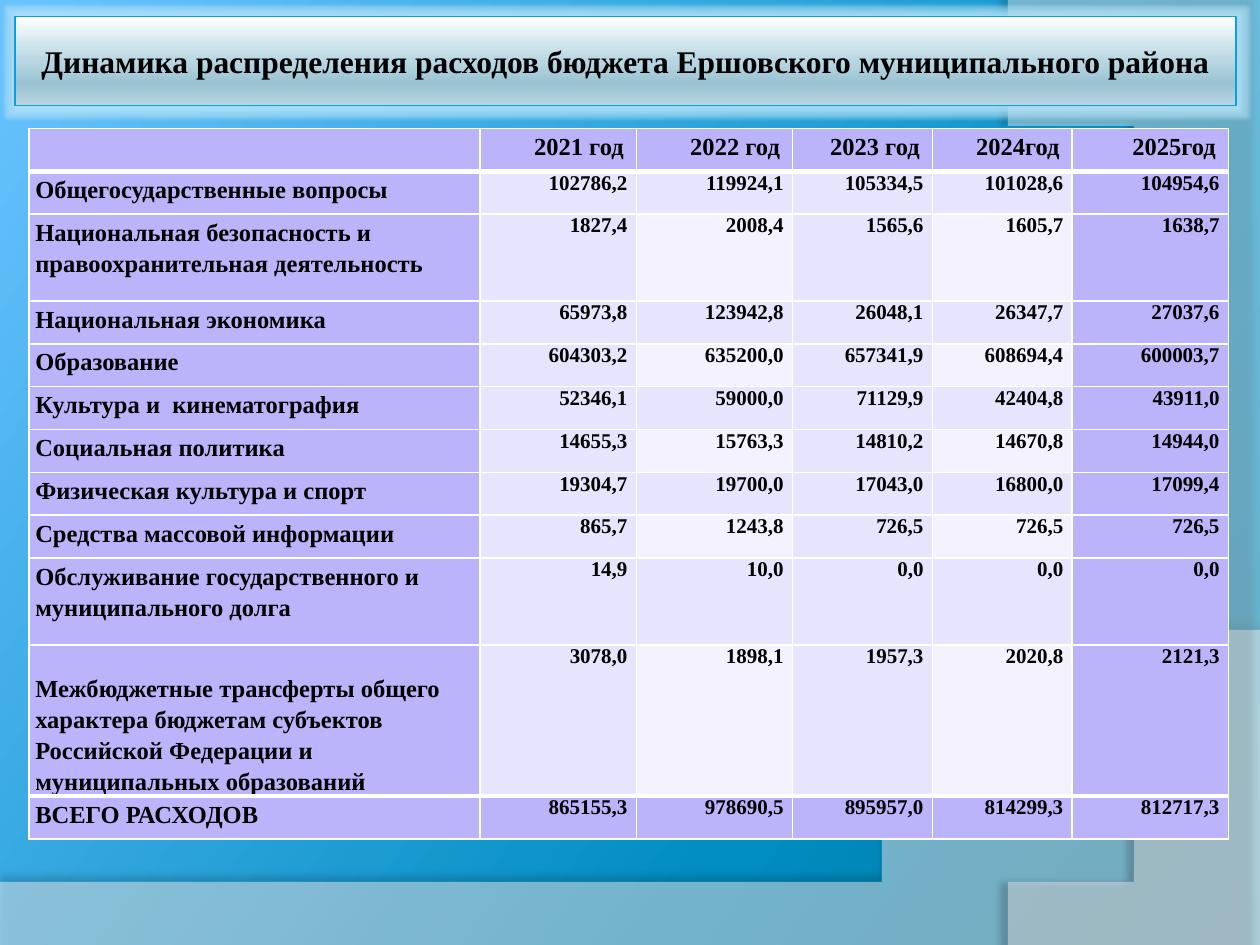
"""Builds a budget expenditure slide: title banner and table over a wave background."""
from lxml.etree import SubElement
from pptx import Presentation
from pptx.dml.color import RGBColor
from pptx.enum.shapes import MSO_SHAPE
from pptx.enum.text import MSO_ANCHOR, PP_ALIGN
from pptx.oxml import parse_xml
from pptx.oxml.ns import nsdecls, qn
from pptx.util import Inches, Pt

TITLE = "Динамика распределения расходов бюджета Ершовского муниципального района"
YEARS = ["2021 год ", "2022 год ", "2023 год ", "2024год ", "2025год "]
EXPENSES = [
    ("Общегосударственные вопросы", "102786,2", "119924,1", "105334,5", "101028,6", "104954,6"),
    ("Национальная безопасность и правоохранительная деятельность",
     "1827,4", "2008,4", "1565,6", "1605,7", "1638,7"),
    ("Национальная экономика", "65973,8", "123942,8", "26048,1", "26347,7", "27037,6"),
    ("Образование", "604303,2", "635200,0", "657341,9", "608694,4", "600003,7"),
    ("Культура и  кинематография", "52346,1", "59000,0", "71129,9", "42404,8", "43911,0"),
    ("Социальная политика", "14655,3", "15763,3", "14810,2", "14670,8", "14944,0"),
    ("Физическая культура и спорт", "19304,7", "19700,0", "17043,0", "16800,0", "17099,4"),
    ("Средства массовой информации", "865,7", "1243,8", "726,5", "726,5", "726,5"),
    ("Обслуживание государственного и муниципального долга", "14,9", "10,0", "0,0", "0,0", "0,0"),
    ("Межбюджетные трансферты общего характера бюджетам субъектов Российской Федерации "
     "и муниципальных образований", "3078,0", "1898,1", "1957,3", "2020,8", "2121,3"),
    ("ВСЕГО РАСХОДОВ", "865155,3", "978690,5", "895957,0", "814299,3", "812717,3"),
]
COLORS = {
    "text": "000000", "white": "FFFFFF", "accent": "BBB4FB", "band": "E7E5FD", "pale": "F3F2FE",
    "deep": "0076A1", "blue": "008DC0", "sky": "6AC3FF",
    "steel": "9BC3D3", "mist": "B8D6E1", "outline": "0F9ED5", "glow": "B5E3F7",
}
FONT = "Times New Roman"
WIDTH, HEIGHT = 10, 7.5
COLUMNS = [3.58, 1.24, 1.24, 1.11, 1.11, 1.24]
ROW, TALL_ROWS = 0.34, {2: 0.69, 9: 0.69, 10: 1.2}
THICK_EDGES = {"lnT": (1, len(EXPENSES)), "lnB": (0, len(EXPENSES) - 1)}
WAVES = [
    {"corners": [(0, HEIGHT), (WIDTH, HEIGHT)],
     "curve": [(10, 5.2), (5.59, 7.29), (3.91, 7.19), (0, 7.05)],
     "opacity": 45, "shadow": (35, 4, 3.5, 270)},
    {"corners": [(10, 0.02), (WIDTH, HEIGHT)],
     "curve": [(8.21, 7.5), (9.35, 6.19), (10.18, 3), (8, 0)],
     "opacity": 40, "shadow": (45, 4, 4, 180)},
]


def gradient(stops, angle):
    marks = "".join(f'<a:gs pos="{share * 1000}"><a:srgbClr val="{COLORS[name]}"/></a:gs>'
                    for share, name in stops)
    return (f'<a:gradFill {nsdecls("a")} rotWithShape="1"><a:gsLst>{marks}</a:gsLst>'
            f'<a:lin ang="{angle * 60000}" scaled="0"/></a:gradFill>')


def effects(content):
    return parse_xml(f'<a:effectLst {nsdecls("a")}>{content}</a:effectLst>')


def bezier(points, steps=40):
    for step in range(steps + 1):
        t = step / steps
        weights = ((1 - t) ** 3, 3 * t * (1 - t) ** 2, 3 * t * t * (1 - t), t ** 3)
        yield tuple(sum(w * point[axis] for w, point in zip(weights, points)) for axis in (0, 1))


def write(frame, text, size, align, spaced=False):
    paragraph = frame.paragraphs[0]
    paragraph.alignment = align
    if spaced:
        paragraph.line_spacing, paragraph.space_after = 1.15, Pt(10)
    run = paragraph.add_run()
    run.text = text
    run.font.name, run.font.size, run.font.bold = FONT, Pt(size), True
    run.font.color.rgb = RGBColor.from_string(COLORS["text"])


def add_background(slide):
    slide.background.fill.solid()
    properties = slide.background._cSld.bg.bgPr
    fill = properties.find(qn("a:solidFill"))
    properties.replace(fill, parse_xml(gradient([(0, "deep"), (30, "blue"), (100, "sky")], 217)))
    for wave in WAVES:
        start, *rest = wave["corners"] + list(bezier(wave["curve"]))
        builder = slide.shapes.build_freeform(*start, scale=Inches(1))
        builder.add_line_segments(rest, close=True)
        shape = builder.convert_to_shape()
        shape.fill.solid()
        shape.fill.fore_color.rgb = RGBColor.from_string(COLORS["white"])
        color = shape._element.spPr.find(qn("a:solidFill"))[0]
        SubElement(color, qn("a:alpha"), val=str(wave["opacity"] * 1000))
        shape.line.fill.background()
        alpha, blur, distance, angle = wave["shadow"]
        shape._element.spPr.append(effects(
            f'<a:outerShdw blurRad="{Pt(blur)}" dist="{Pt(distance)}" dir="{angle * 60000}" '
            f'algn="ctr" rotWithShape="0"><a:srgbClr val="{COLORS["text"]}">'
            f'<a:alpha val="{alpha * 1000}"/></a:srgbClr></a:outerShdw>'))


def add_title(slide):
    banner = slide.shapes.add_shape(
        MSO_SHAPE.RECTANGLE, Inches(0.12), Inches(0.13), Inches(9.69), Inches(0.71))
    banner.line.color.rgb = RGBColor.from_string(COLORS["outline"])
    banner.line.width = Pt(0.75)
    properties = banner._element.spPr
    stops = [(0, "white"), (50, "mist"), (75, "steel"), (100, "mist")]
    properties.insert(2, parse_xml(gradient(stops, 90)))
    properties.append(effects(f'<a:glow rad="{Pt(5)}"><a:srgbClr val="{COLORS["glow"]}">'
                              '<a:alpha val="60000"/></a:srgbClr></a:glow>'))
    frame = banner.text_frame
    frame.word_wrap, frame.vertical_anchor = True, MSO_ANCHOR.MIDDLE
    frame.margin_left = frame.margin_right = frame.margin_top = frame.margin_bottom = Inches(0.05)
    write(frame, TITLE, 18, PP_ALIGN.CENTER)


def cell_color(row, column):
    if row in (0, len(EXPENSES)) or column in (0, len(YEARS)):
        return COLORS["accent"]
    return COLORS["pale" if row % 2 == 0 and column % 2 == 0 else "band"]


def style_cell(cell, row, column):
    properties = cell._tc.get_or_add_tcPr()
    for edge in ("lnL", "lnR", "lnT", "lnB"):
        width = 3 if row in THICK_EDGES.get(edge, ()) else 1
        line = SubElement(properties, qn(f"a:{edge}"), w=str(Pt(width)))
        SubElement(SubElement(line, qn("a:solidFill")), qn("a:srgbClr"), val=COLORS["white"])
    cell.fill.solid()
    cell.fill.fore_color.rgb = RGBColor.from_string(cell_color(row, column))


def add_expense_table(slide):
    grid = [["", *YEARS], *EXPENSES]
    heights = [TALL_ROWS.get(row, ROW) for row in range(len(grid))]
    table = slide.shapes.add_table(
        len(grid), len(COLUMNS), Inches(0.23), Inches(1.02),
        Inches(sum(COLUMNS)), Inches(sum(heights))).table
    for column, width in zip(table.columns, COLUMNS):
        column.width = Inches(width)
    for row, (values, height) in enumerate(zip(grid, heights)):
        table.rows[row].height = Inches(height)
        for column, value in enumerate(values):
            cell = table.cell(row, column)
            style_cell(cell, row, column)
            heading = row == 0 or column == 0
            cell.margin_left = cell.margin_right = Inches(0.05 if heading else 0.07)
            cell.margin_top, cell.margin_bottom = Inches(0.01 if heading else 0), 0
            if value:
                write(cell.text_frame, value, 14 if heading else 12,
                      PP_ALIGN.RIGHT if column else PP_ALIGN.LEFT, heading)
    table.cell(len(EXPENSES) - 1, 0).vertical_anchor = MSO_ANCHOR.BOTTOM


def main():
    deck = Presentation()
    deck.slide_width, deck.slide_height = Inches(WIDTH), Inches(HEIGHT)
    slide = deck.slides.add_slide(deck.slide_layouts[6])
    add_background(slide)
    add_title(slide)
    add_expense_table(slide)
    deck.save("out.pptx")


if __name__ == "__main__":
    main()
